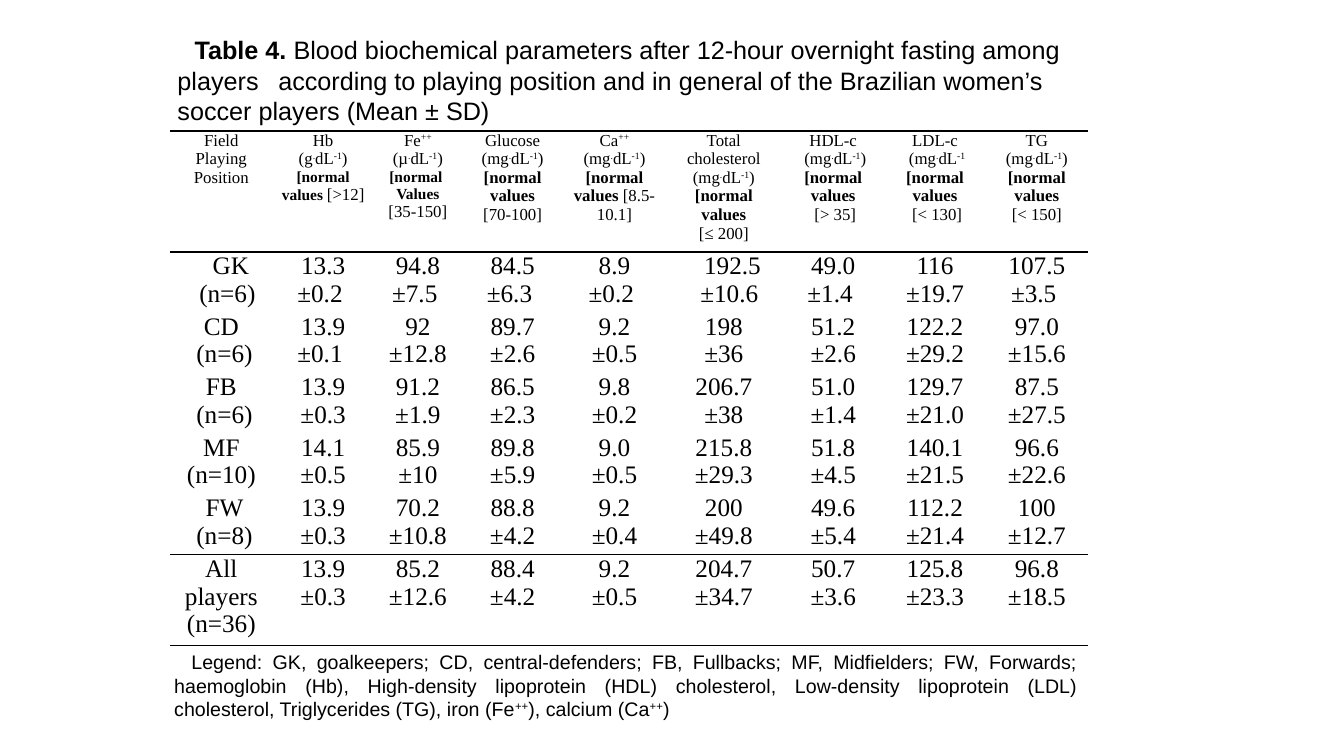
from lxml import etree
from pptx import Presentation
from pptx.dml.color import RGBColor
from pptx.enum.text import MSO_ANCHOR, MSO_AUTO_SIZE, PP_ALIGN
from pptx.oxml.ns import qn
from pptx.util import Inches, Pt

LEFT, CENTER, JUSTIFY = PP_ALIGN.LEFT, PP_ALIGN.CENTER, PP_ALIGN.JUSTIFY
TOP, MIDDLE = MSO_ANCHOR.TOP, MSO_ANCHOR.MIDDLE
FIT_SHAPE = MSO_AUTO_SIZE.SHAPE_TO_FIT_TEXT
TITLE_ONLY = 5

COLORS = {"text": "000000", "rule": "000000", "body": "FFFFFF"}
SANS, SERIF = "Arial", "Times New Roman"
FIRST_INDENT = 0.17

# In texts, * switches bold and ^ switches superscript
CAPTION = ("*Table 4. *Blood biochemical parameters after 12-hour overnight fasting "
           "among players\taccording to playing position and in general of the "
           "Brazilian women’s soccer players (Mean ± SD)")
LEGEND = ("Legend: GK, goalkeepers; CD, central-defenders; FB, Fullbacks; "
          "MF, Midfielders; FW, Forwards; haemoglobin (Hb), High-density lipoprotein "
          "(HDL) cholesterol, Low-density lipoprotein (LDL) cholesterol, "
          "Triglycerides (TG), iron (Fe^++^), calcium (Ca^++^) ")

MG_UNIT = "(mg^.^dL^-1^)"
NORMAL = "*[normal values*"
HEADERS = [
    ["Field Playing", "Position"],
    ["Hb", "(g^.^dL^-1^)", "*[normal values *[>12]"],
    ["Fe^++^", "(µ^.^dL^-1^)", "*[normal *", "*Values*", " [35-150] "],
    ["Glucose", MG_UNIT, NORMAL, "[70-100]"],
    ["Ca^++^", MG_UNIT, NORMAL + " [8.5-10.1]"],
    ["Total", "cholesterol", MG_UNIT, NORMAL, "[≤ 200]"],
    ["HDL-c", " " + MG_UNIT, NORMAL, " [> 35]"],
    ["LDL-c", " (mg^.^dL^-1^", NORMAL, " [< 130]"],
    ["TG", MG_UNIT, NORMAL, "[< 150]"],
]
SMALL_BOLD_COLUMNS = (1, 2)
# Cells are parted by |, the lines in a cell by /
GROUPS = [
    "GK/(n=6)|13.3/±0.2 |94.8/±7.5 |84.5/±6.3 |8.9/±0.2 |192.5/±10.6 "
    "|49.0/±1.4 |116/±19.7|107.5/±3.5 ",
    "CD/ (n=6)|13.9/±0.1 |92/±12.8|89.7/±2.6|9.2/±0.5|198/±36"
    "|51.2/±2.6|122.2/±29.2|97.0/±15.6",
    "FB/ (n=6)|13.9/±0.3|91.2/±1.9|86.5/±2.3|9.8/±0.2|206.7/±38"
    "|51.0/±1.4|129.7/±21.0|87.5/±27.5",
    "MF/(n=10)|14.1/±0.5|85.9/±10|89.8/±5.9|9.0/±0.5|215.8/±29.3"
    "|51.8/±4.5|140.1/±21.5|96.6/±22.6",
    " FW/ (n=8)|13.9/±0.3|70.2/±10.8|88.8/±4.2|9.2/±0.4|200/±49.8"
    "|49.6/±5.4|112.2/±21.4|100/±12.7",
    "All players/(n=36)|13.9/±0.3|85.2/±12.6|88.4/±4.2|9.2/±0.5|204.7/±34.7"
    "|50.7/±3.6|125.8/±23.3|96.8/±18.5",
]
# First-line indents of the goalkeeper row, by column
GK_INDENTS = {0: (0.19, 0.12), 5: (FIRST_INDENT, FIRST_INDENT)}

COLUMN_WIDTHS = [1.01, 1.01, 0.87, 1.01, 1.01, 1.16, 1.01, 1.01, 1.01]
ROW_HEIGHTS = [1.2] + [0.6] * 5 + [0.9]
# Rule widths in points above and below each row
ROW_RULES = [(1.5, 1.5), (1.5, 0), (0, 0), (0, 0), (0, 0), (0, 1), (1, 1)]


def write_runs(paragraph, text, font, size, bold_size=None):
    bold = raised = False
    for bold_part in text.split("*"):
        for part in bold_part.split("^"):
            if part:
                run = paragraph.add_run()
                run.text = part
                look = {"name": font, "bold": bold,
                        "size": Pt(bold_size if bold and bold_size else size)}
                for key, value in look.items():
                    setattr(run.font, key, value)
                run.font.color.rgb = RGBColor.from_string(COLORS["text"])
                if raised:
                    run._r.get_or_add_rPr().set("baseline", "30000")
            raised = not raised
        raised = False
        bold = not bold


def indent_first_line(paragraph, inches):
    properties = paragraph._p.get_or_add_pPr()
    properties.set("marL", "0")
    properties.set("indent", str(Inches(inches)))


def add_tab_stop(paragraph, inches):
    stops = etree.SubElement(paragraph._p.get_or_add_pPr(), qn("a:tabLst"))
    etree.SubElement(stops, qn("a:tab"), pos=str(Inches(inches)), algn="l")


def write_block(shape, text, size, align, anchor):
    frame = shape.text_frame
    for key, value in {"word_wrap": True, "auto_size": FIT_SHAPE,
                       "vertical_anchor": anchor}.items():
        setattr(frame, key, value)
    paragraph = frame.paragraphs[0]
    paragraph.alignment = align
    indent_first_line(paragraph, FIRST_INDENT)
    write_runs(paragraph, text, SANS, size)
    return paragraph


def set_rules(cell, above, below):
    properties = cell._tc.get_or_add_tcPr()
    for side, width in (("L", 0), ("R", 0), ("T", above), ("B", below)):
        line = etree.SubElement(properties, qn(f"a:ln{side}"), w=str(Pt(width)))
        if width:
            fill = etree.SubElement(line, qn("a:solidFill"))
            etree.SubElement(fill, qn("a:srgbClr"), val=COLORS["rule"])
        else:
            etree.SubElement(line, qn("a:noFill"))


def write_cell(cell, lines, size, bold_size=None, indents=()):
    for key, value in {"margin_left": 0.07, "margin_right": 0.07,
                       "margin_top": 0, "margin_bottom": 0}.items():
        setattr(cell, key, Inches(value))
    frame = cell.text_frame
    for index, line in enumerate(lines):
        paragraph = frame.add_paragraph() if index else frame.paragraphs[0]
        paragraph.alignment = CENTER
        if indents:
            indent_first_line(paragraph, indents[index])
        write_runs(paragraph, line, SERIF, size, bold_size)


def add_parameter_table(slide):
    table = slide.shapes.add_table(
        len(ROW_HEIGHTS), len(COLUMN_WIDTHS), Inches(1.69), Inches(1.3),
        Inches(sum(COLUMN_WIDTHS)), Inches(sum(ROW_HEIGHTS))).table
    table.first_row = table.horz_banding = False
    for column, width in zip(table.columns, COLUMN_WIDTHS):
        column.width = Inches(width)
    for row, height in zip(table.rows, ROW_HEIGHTS):
        row.height = Inches(height)

    last = len(GROUPS)
    contents = [HEADERS] + [[value.split("/") for value in group.split("|")]
                            for group in GROUPS]
    for r, (row_lines, rules) in enumerate(zip(contents, ROW_RULES)):
        for c, lines in enumerate(row_lines):
            cell = table.cell(r, c)
            set_rules(cell, *rules)
            if r in (0, last):
                cell.fill.background()
            else:
                cell.fill.solid()
                cell.fill.fore_color.rgb = RGBColor.from_string(COLORS["body"])
            write_cell(cell, lines, 18 if r else 12,
                       bold_size=11 if c in SMALL_BOLD_COLUMNS else None,
                       indents=GK_INDENTS.get(c, ()) if r == 1 else ())


def main():
    prs = Presentation()
    prs.slide_width, prs.slide_height = Inches(13.33), Inches(7.5)
    slide = prs.slides.add_slide(prs.slide_layouts[TITLE_ONLY])

    # Caption
    caption = slide.shapes.title
    caption.left, caption.top = Inches(1.66), Inches(0.29)
    caption.width, caption.height = Inches(9.22), Inches(1.01)
    add_tab_stop(write_block(caption, CAPTION, 18, LEFT, MIDDLE), 1.09)

    # Blood values by playing position
    add_parameter_table(slide)

    # Legend
    legend = slide.shapes.add_textbox(Inches(1.63), Inches(6.4),
                                      Inches(9.16), Inches(0.81))
    write_block(legend, LEGEND, 14, JUSTIFY, TOP)

    prs.save("out.pptx")


if __name__ == "__main__":
    main()
